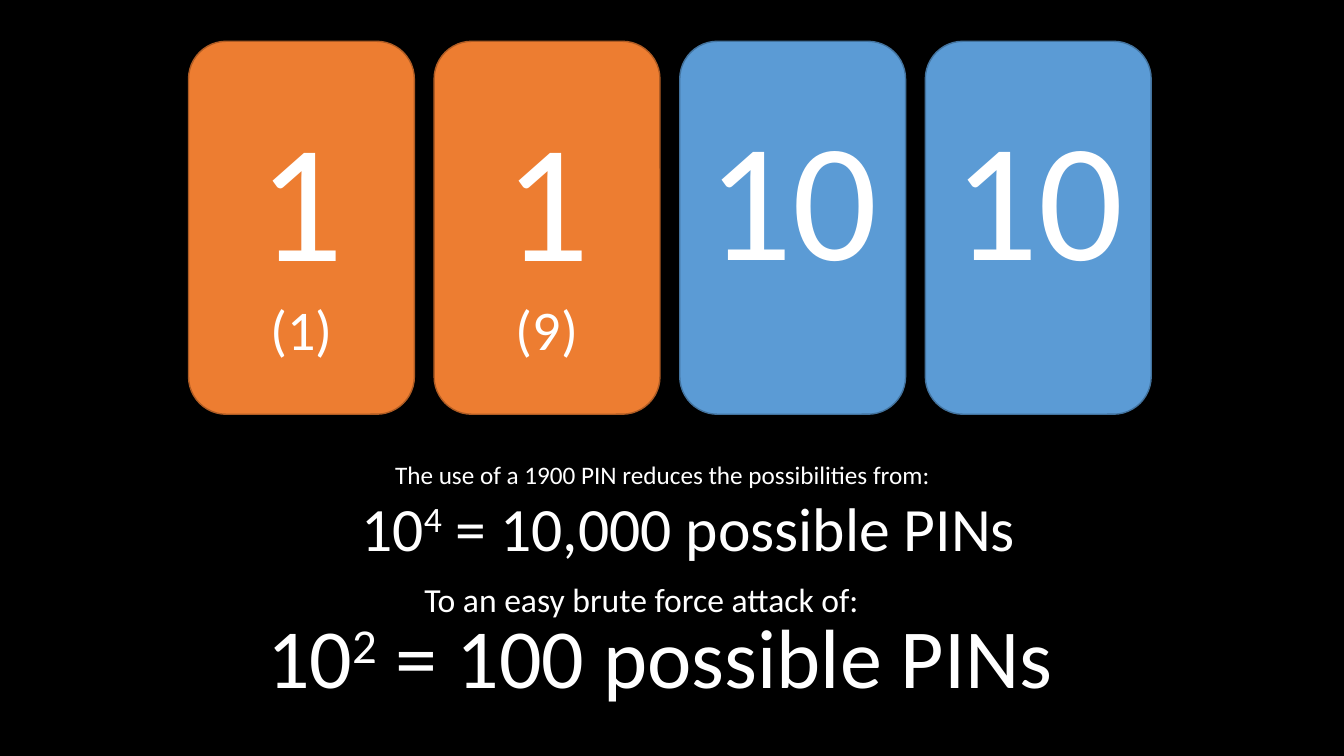
from pptx import Presentation
from pptx.dml.color import RGBColor
from pptx.enum.shapes import MSO_SHAPE
from pptx.enum.text import MSO_ANCHOR, MSO_AUTO_SIZE, PP_ALIGN
from pptx.util import Inches, Pt

ROUND = MSO_SHAPE.ROUNDED_RECTANGLE
MIDDLE = MSO_ANCHOR.MIDDLE
FIT = MSO_AUTO_SIZE.SHAPE_TO_FIT_TEXT
LEFT, CENTER = PP_ALIGN.LEFT, PP_ALIGN.CENTER

COLORS = {
    "black": "000000",
    "white": "FFFFFF",
    "orange": "ED7D31",
    "rust": "AF5C24",
    "blue": "5B9BD5",
    "navy": "43739E",
}


def color(name):
    return RGBColor.from_string(COLORS[name])


def add_text(para, text, size=18, align=LEFT, raised=False):
    para.alignment = align
    run = para.add_run()
    run.text = text
    run.font.name = "Calibri"
    run.font.size = Pt(size)
    run.font.color.rgb = color("white")
    if raised:
        run._r.get_or_add_rPr().set("baseline", "30000")


def add_card(slide, left, digit, note, fill, edge):
    card = slide.shapes.add_shape(
        ROUND, Inches(left), Inches(0.41), Inches(2.24), Inches(3.7))
    card.shadow.inherit = False
    card.fill.solid()
    card.fill.fore_color.rgb = color(fill)
    card.line.color.rgb = color(edge)
    card.line.width = Pt(1)
    frame = card.text_frame
    frame.word_wrap = True
    frame.vertical_anchor = MIDDLE
    add_text(frame.paragraphs[0], digit, size=120, align=CENTER)
    if note:
        add_text(frame.add_paragraph(), note, size=40, align=CENTER)
    else:
        frame.margin_bottom = Inches(0.73)


def add_label(slide, place, parts, size, align=LEFT):
    box = slide.shapes.add_textbox(*map(Inches, place))
    frame = box.text_frame
    frame.word_wrap = False
    frame.auto_size = FIT
    for text, raised in parts:
        add_text(frame.paragraphs[0], text, size=size, align=align,
                 raised=raised)


def add_power(slide, place, power, total, size):
    parts = [("10", False), (power, True),
             (f" = {total} possible PINs", False)]
    add_label(slide, place, parts, size, align=CENTER)


def main():
    """Build the slide on how a 1900 PIN cuts the number of possible PINs."""
    deck = Presentation()
    deck.slide_width, deck.slide_height = Inches(13.33), Inches(7.5)
    slide = deck.slides.add_slide(deck.slide_layouts[6])
    slide.background.fill.solid()
    slide.background.fill.fore_color.rgb = color("black")

    cards = [
        ("1", "(1)", "orange", "rust"),
        ("1", "(9)", "orange", "rust"),
        ("10", "", "blue", "navy"),
        ("10", "", "blue", "navy"),
    ]
    for index, card in enumerate(cards):
        add_card(slide, 1.87 + 2.436 * index, *card)

    add_label(slide, (3.82, 4.51, 5.57, 0.4),
              [("The use of a 1900 PIN reduces the possibilities from:",
                False)], 18)
    add_power(slide, (3.44, 4.81, 6.78, 0.84), "4", "10,000", 44)
    add_label(slide, (4.11, 5.69, 4.56, 0.5),
              [("To an easy brute force attack of:", False)], 24)
    add_power(slide, (2.49, 5.95, 8.11, 1.11), "2", "100", 60)
    deck.save("out.pptx")


if __name__ == "__main__":
    main()
